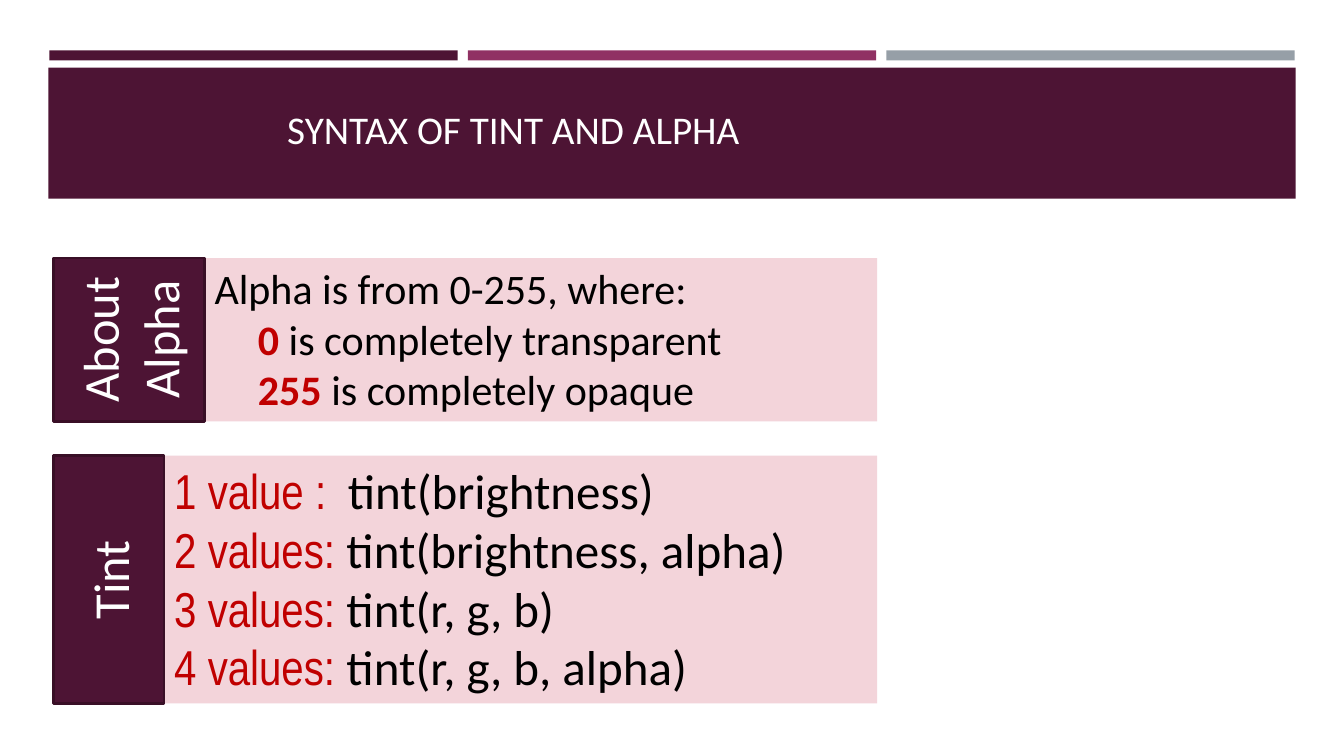
from lxml.etree import SubElement
from pptx import Presentation
from pptx.dml.color import RGBColor
from pptx.enum.shapes import MSO_SHAPE as Shape
from pptx.enum.text import MSO_ANCHOR as Anchor, PP_ALIGN as Align
from pptx.oxml.ns import qn
from pptx.util import Inches, Pt

COLORS = {"plum": "4D1434", "edge": "390F26", "berry": "903163", "gray": "969FA7",
          "pink": "E6A7B3", "red": "C00000", "black": "000000", "white": "FFFFFF"}

# Run styles: font, size, colour, bold
STYLES = {
    "title": ("Calibri", 28, "white", False),
    "label": ("Calibri", 36, "white", False),
    "body": ("Calibri", 30, "black", False),
    "value": ("Calibri", 30, "red", True),
    "count": ("Arial Narrow", 35, "red", False),
    "gap": ("Arial Narrow", 32, "red", False),
    "code": ("Calibri", 35, "black", False),
}
TITLE = "SYNTAX OF TINT AND ALPHA"
ALPHA = [
    [("Alpha is from 0-255, where:", "body")],
    [("\t", "body"), ("0", "value"), (" is completely transparent", "body")],
    [("\t", "body"), ("255", "value"), (" is completely opaque", "body")],
]
TINT = [
    [("1 value : ", "count"), (" ", "gap"), ("tint(brightness)", "code")],
    [("2 values: ", "count"), ("tint(brightness, alpha)", "code")],
    [("3 values: ", "count"), ("tint(r, g, b)", "code")],
    [("4 values: ", "count"), ("tint(r, g, b, alpha)", "code")],
]
# Label, its width, text rows, row left, top, height
PANELS = [
    ("Tint", 1.1, TINT, 1.63, 4.52, 2.46),
    ("About Alpha", 1.5, ALPHA, 2.03, 2.56, 1.62),
]
STRIPES = ["plum", "berry", "gray"]
WIDE, HIGH = 13.33, 7.5
LEFT, RIGHT = 0.49, 8.7
STRIPE, STEP = 4.05, 4.15
LABEL_LEFT = 0.53
TAB = 0.43


def color(name):
    return RGBColor.from_string(COLORS[name])


def add_box(slide, box, fill, edge=None):
    shape = slide.shapes.add_shape(Shape.RECTANGLE, *map(Inches, box))
    shape.shadow.inherit = False
    shape.fill.solid()
    shape.fill.fore_color.rgb = color(fill)
    if edge:
        shape.line.color.rgb = color(edge)
        shape.line.width = Pt(1.75)
    else:
        shape.line.fill.background()
    return shape


def write(shape, rows, anchor, align=Align.LEFT):
    frame = shape.text_frame
    frame.word_wrap = True
    frame.vertical_anchor = anchor
    for i, row in enumerate(rows):
        para = frame.add_paragraph() if i else frame.paragraphs[0]
        para.alignment = align
        if row[0][0] == "\t":
            tabs = SubElement(para._p.get_or_add_pPr(), qn("a:tabLst"))
            SubElement(tabs, qn("a:tab"), pos=str(Inches(TAB)), algn="l")
        for text, style in row:
            run = para.add_run()
            run.text = text
            name, size, tone, bold = STYLES[style]
            form = {"name": name, "size": Pt(size), "bold": bold}
            for key, value in form.items():
                setattr(run.font, key, value)
            run.font.color.rgb = color(tone)


def fade(shape, share):
    """Make the solid fill partly transparent."""
    tone = shape.fill._xPr.find(qn("a:solidFill"))[0]
    SubElement(tone, qn("a:alpha"), val=str(share * 1000))


def add_panel(slide, label, width, rows, left, top, height):
    body = add_box(slide, (left, top, RIGHT - left, height), "pink")
    fade(body, 48)
    write(body, rows, Anchor.TOP)
    # The label is turned a quarter, so its width and height swap about its centre
    shift = (width - height) / 2
    tag = add_box(slide, (LABEL_LEFT + shift, top - shift, height, width), "plum", "edge")
    tag.rotation = 270
    write(tag, [[(label, "label")]], Anchor.MIDDLE, Align.CENTER)


def main():
    deck = Presentation()
    deck.slide_width, deck.slide_height = Inches(WIDE), Inches(HIGH)
    slide = deck.slides.add_slide(deck.slide_layouts[6])
    for i, tone in enumerate(STRIPES):
        add_box(slide, (LEFT + i * STEP, 0.5, STRIPE, 0.1), tone)
    add_box(slide, (0.48, 0.67, 12.37, 1.3), "plum")
    title = slide.shapes.add_textbox(*map(Inches, (2.75, 0.31, 8.08, 1.25)))
    write(title, [[(TITLE, "title")]], Anchor.BOTTOM)
    for panel in PANELS:
        add_panel(slide, *panel)
    deck.save("out.pptx")


if __name__ == "__main__":
    main()
